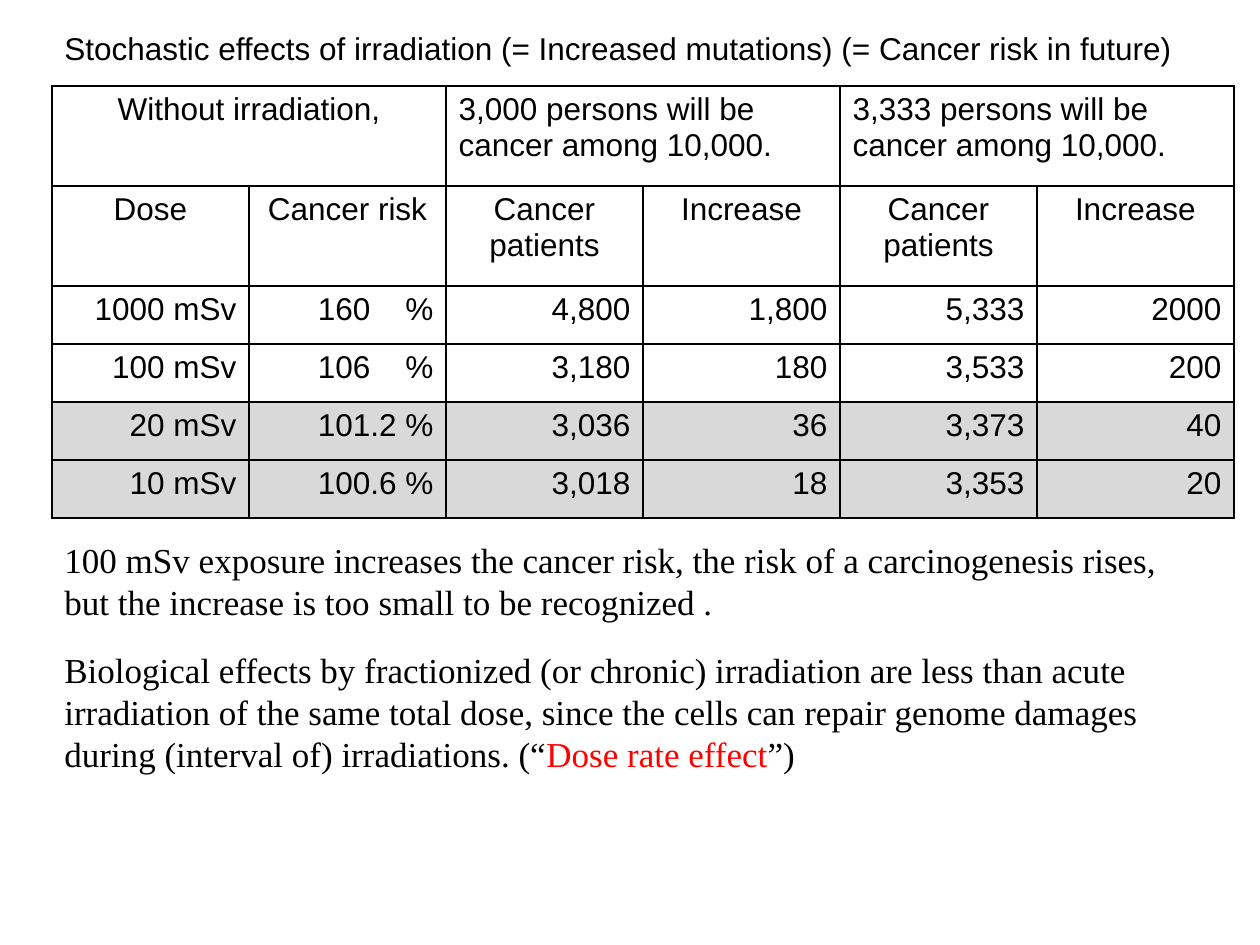
from dataclasses import dataclass

from lxml.etree import SubElement
from pptx import Presentation
from pptx.dml.color import RGBColor
from pptx.enum.text import MSO_AUTO_SIZE, PP_ALIGN
from pptx.oxml.ns import qn
from pptx.util import Emu, Pt

PX_PER_INCH = 126
BLACK = RGBColor(0x00, 0x00, 0x00)
RED = RGBColor(0xFF, 0x00, 0x00)
WHITE = RGBColor(0xFF, 0xFF, 0xFF)
GREY = RGBColor(0xD9, 0xD9, 0xD9)

SANS = {"name": "Arial", "size": Pt(18)}
SERIF = {"name": "Times New Roman", "size": Pt(20)}


@dataclass(frozen=True)
class Run:
    text: str
    color: RGBColor = BLACK
    spacing: int = 0  # hundredths of a point


@dataclass(frozen=True)
class TextBlock:
    left: int
    top: int
    width: int
    height: int
    font: dict
    paragraphs: list[list[Run]]
    wrap: bool = True


@dataclass(frozen=True)
class TableRow:
    height: int
    cells: list[str]
    align: PP_ALIGN
    fill: RGBColor = WHITE


TEXT_BLOCKS = [
    TextBlock(52, 23, 1143, 50, SANS, [[Run(
        "Stochastic effects of irradiation (= Increased mutations) "
        "(= Cancer risk in future)")]], wrap=False),
    TextBlock(52, 532, 1177, 97, SERIF, [
        [Run("100 mSv exposure increases the cancer risk, "
             "the risk of a carcinogenesis rises,")],
        [Run("but the increase is too small to be recognized .")]]),
    TextBlock(52, 642, 1182, 140, SERIF, [[
        Run("Biological effects by fractionized (or chronic) irradiation are "
            "less than acute irradiation of the same total dose, since the "
            "cells can repair genome damages during (interval of) "
            "irradiations. (“"),
        Run("Dose rate effect", RED),
        Run("”)")]]),
]

TABLE_LEFT, TABLE_TOP, COLUMN_WIDTH = 52, 86, 197
RISK_COLUMN = 1
WIDE_GAP = 1500  # stands in for a missing decimal point and digit
HEADINGS = ["Without irradiation,",
            "3,000 persons will be cancer among 10,000.",
            "3,333 persons will be cancer among 10,000."]
ROWS = [
    TableRow(100, ["Dose", "Cancer risk"] + ["Cancer patients", "Increase"] * 2,
             PP_ALIGN.CENTER),
    TableRow(58, ["1000 mSv", "160 %", "4,800", "1,800", "5,333", "2000"],
             PP_ALIGN.RIGHT),
    TableRow(58, ["100 mSv", "106 %", "3,180", "180", "3,533", "200"],
             PP_ALIGN.RIGHT),
    TableRow(58, ["20 mSv", "101.2 %", "3,036", "36", "3,373", "40"],
             PP_ALIGN.RIGHT, GREY),
    TableRow(58, ["10 mSv", "100.6 %", "3,018", "18", "3,353", "20"],
             PP_ALIGN.RIGHT, GREY),
]


def px(length: int) -> Emu:
    return Emu(round(length * 914400 / PX_PER_INCH))


def write_runs(paragraph, runs: list[Run], font: dict) -> None:
    for item in runs:
        run = paragraph.add_run()
        run.text = item.text
        for attribute, value in font.items():
            setattr(run.font, attribute, value)
        run.font.color.rgb = item.color
        if item.spacing:
            run.font._element.set("spc", str(item.spacing))


def add_text(slide, block: TextBlock) -> None:
    box = slide.shapes.add_textbox(px(block.left), px(block.top),
                                   px(block.width), px(block.height))
    frame = box.text_frame
    frame.word_wrap = block.wrap
    frame.auto_size = MSO_AUTO_SIZE.SHAPE_TO_FIT_TEXT
    for index, runs in enumerate(block.paragraphs):
        paragraph = frame.add_paragraph() if index else frame.paragraphs[0]
        write_runs(paragraph, runs, block.font)


def style_cell(cell, fill: RGBColor) -> None:
    properties = cell._tc.get_or_add_tcPr()
    for side in ("a:lnL", "a:lnR", "a:lnT", "a:lnB"):
        line = SubElement(properties, qn(side), w=str(Pt(1)))
        solid = SubElement(line, qn("a:solidFill"))
        SubElement(solid, qn("a:srgbClr"), val=str(BLACK))
    cell.fill.solid()
    cell.fill.fore_color.rgb = fill


def write_cell(cell, runs: list[Run], align: PP_ALIGN) -> None:
    paragraph = cell.text_frame.paragraphs[0]
    paragraph.alignment = align
    write_runs(paragraph, runs, SANS)


def risk_runs(text: str) -> list[Run]:
    """Widen the gap before the percent sign of a whole number."""
    number, sign = text.split(" ")
    if sign != "%" or "." in number:
        return [Run(text)]
    return [Run(number), Run(" ", spacing=WIDE_GAP), Run(sign)]


def add_dose_table(slide) -> None:
    columns = len(ROWS[0].cells)
    heights = [100] + [row.height for row in ROWS]
    table = slide.shapes.add_table(
        len(heights), columns, px(TABLE_LEFT), px(TABLE_TOP),
        px(COLUMN_WIDTH * columns), px(sum(heights))).table
    for column in table.columns:
        column.width = px(COLUMN_WIDTH)
    for table_row, height in zip(table.rows, heights):
        table_row.height = px(height)

    # Headings, each over two columns
    for index in range(columns):
        style_cell(table.cell(0, index), WHITE)
    for index, heading in enumerate(HEADINGS):
        cell = table.cell(0, 2 * index)
        cell.merge(table.cell(0, 2 * index + 1))
        write_cell(cell, [Run(heading)],
                   PP_ALIGN.LEFT if index else PP_ALIGN.CENTER)

    # Column titles and values
    for row_index, row in enumerate(ROWS, start=1):
        for column_index, text in enumerate(row.cells):
            cell = table.cell(row_index, column_index)
            style_cell(cell, row.fill)
            runs = risk_runs(text) if column_index == RISK_COLUMN else [Run(text)]
            write_cell(cell, runs, row.align)


def main() -> None:
    presentation = Presentation()
    presentation.slide_width = px(1260)
    presentation.slide_height = px(945)
    slide = presentation.slides.add_slide(presentation.slide_layouts[6])
    for block in TEXT_BLOCKS:
        add_text(slide, block)
    add_dose_table(slide)
    presentation.save("out.pptx")


if __name__ == "__main__":
    main()
